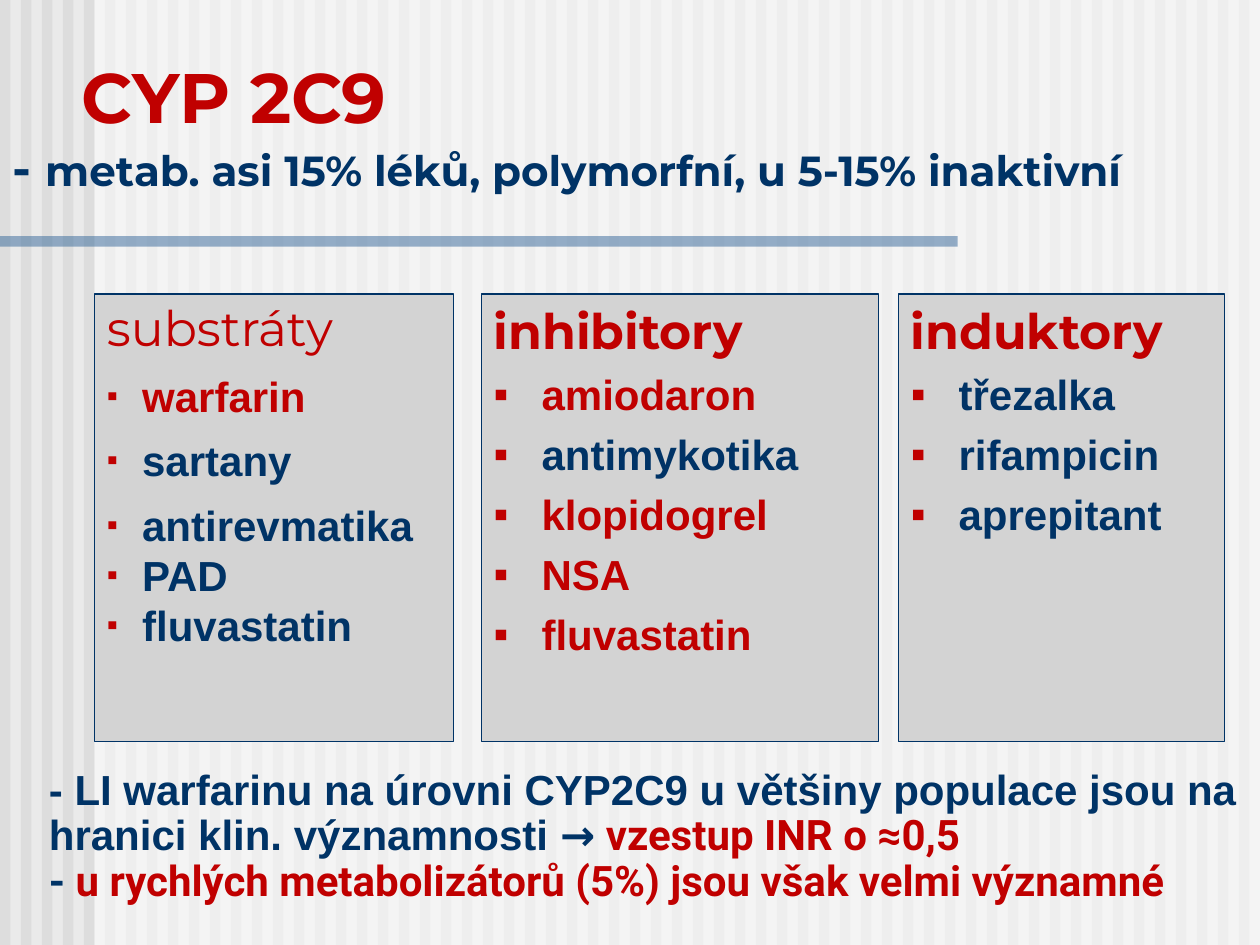
from dataclasses import dataclass
from typing import Optional

from lxml.etree import SubElement
from pptx import Presentation
from pptx.dml.color import RGBColor
from pptx.enum.shapes import MSO_SHAPE as Preset
from pptx.enum.text import MSO_ANCHOR as Anchor, PP_ALIGN as Align
from pptx.oxml.ns import qn
from pptx.util import Inches, Pt

COLUMNS, ROWS = 120, 90
CELL = Inches(10) // COLUMNS
RED, NAVY, BLUE = "C00000", "003366", "336699"
STRIPE, GRAY, WHITE, BACKGROUND = "DDDDDD", "D3D3D3", "FFFFFF", "EAEAEA"
HEADING_FONT, BODY_FONT, NOTE_FONT = "Montserrat", "Arial", "Roboto"


@dataclass(frozen=True)
class Box:
    column: float
    row: float
    width: float
    height: float

    def lengths(self) -> list[int]:
        return [round(value * CELL) for value in (self.column, self.row, self.width, self.height)]


@dataclass(frozen=True)
class Style:
    size: float
    color: str
    name: str = BODY_FONT
    bold: bool = True


@dataclass(frozen=True)
class Item:
    text: str
    color: str = NAVY
    line_points: Optional[float] = None


@dataclass(frozen=True)
class Card:
    column: float
    width: float
    heading: Item
    items: tuple[Item, ...]
    heading_bold: bool = True
    indent: float = 0.38
    bullet_percent: int = 100
    gap: float = 5.5


CARDS = (
    Card(9, 34.2, Item("substráty", RED, 32),
         (Item("warfarin", RED, 32), Item("sartany", NAVY, 32), Item("antirevmatika", NAVY, 32),
          Item("PAD", NAVY, 24), Item("fluvastatin", NAVY, 24)),
         heading_bold=False, indent=0.28, bullet_percent=75, gap=4.8),
    Card(45.84, 37.8, Item("inhibitory", RED),
         (Item("amiodaron", RED), Item("antimykotika"), Item("klopidogrel", RED),
          Item("NSA", RED), Item("fluvastatin", RED))),
    Card(85.56, 31.08, Item("induktory", RED),
         (Item("třezalka"), Item("rifampicin"), Item("aprepitant"))),
)


def rgb(color: str) -> RGBColor:
    return RGBColor.from_string(color)


def set_font(font, style: Style) -> None:
    font.size, font.bold, font.name = Pt(style.size), style.bold, style.name
    font.color.rgb = rgb(style.color)


def add_run(paragraph, text: str, style: Optional[Style] = None) -> None:
    run = paragraph.add_run()
    run.text = text
    if style:
        set_font(run.font, style)


def add_rectangle(slide, box: Box, fill: str, alpha: int = 100, line: Optional[str] = None):
    shape = slide.shapes.add_shape(Preset.RECTANGLE, *box.lengths())
    shape.shadow.inherit = False
    shape.fill.solid()
    shape.fill.fore_color.rgb = rgb(fill)
    if alpha < 100:
        color = shape._element.spPr.find(qn("a:solidFill"))[0]
        SubElement(color, qn("a:alpha"), val=str(alpha * 1000))
    if line:
        shape.line.color.rgb = rgb(line)
        shape.line.width = Pt(0.75)
    else:
        shape.line.fill.background()
    return shape


def add_text_box(slide, box: Box, anchor: Anchor):
    frame = slide.shapes.add_textbox(*box.lengths()).text_frame
    frame.word_wrap = True
    frame.vertical_anchor = anchor
    return frame


def add_bullet(paragraph, indent: float, percent: int) -> None:
    properties = paragraph._p.get_or_add_pPr()
    properties.set("marL", str(Inches(indent)))
    properties.set("indent", str(-Inches(indent)))
    color = SubElement(properties, qn("a:buClr"))
    SubElement(color, qn("a:srgbClr"), val=RED)
    SubElement(properties, qn("a:buSzPct"), val=str(percent * 1000))
    SubElement(properties, qn("a:buFont"), typeface=BODY_FONT)
    SubElement(properties, qn("a:buChar"), char="▪")


def draw_background(slide) -> None:
    slide.background.fill.solid()
    slide.background.fill.fore_color.rgb = rgb(BACKGROUND)
    for column in range(0, COLUMNS, 2):
        add_rectangle(slide, Box(column, 0, 1, ROWS), STRIPE)
    add_rectangle(slide, Box(9, 0, COLUMNS - 9, ROWS), WHITE, 50)
    add_rectangle(slide, Box(0, 22.5, 91.2, 1), BLUE, 50)


def draw_title(slide) -> None:
    frame = add_text_box(slide, Box(0, 4.32, COLUMNS, 15), Anchor.BOTTOM)
    title = frame.paragraphs[0]
    title._p.get_or_add_pPr().set("marL", str(Inches(0.55)))
    set_font(title.font, Style(40, RED, HEADING_FONT))
    add_run(title, "CYP 2C9")
    subtitle = frame.add_paragraph()
    add_run(subtitle, "- ", Style(28, NAVY, HEADING_FONT))
    add_run(subtitle, "metab. asi 15% léků, polymorfní, u 5-15% inaktivní",
            Style(24, NAVY, HEADING_FONT))


def draw_card(slide, card: Card) -> None:
    shape = add_rectangle(slide, Box(card.column, 28, card.width, 42.6), GRAY, line=NAVY)
    frame = shape.text_frame
    frame.word_wrap = True
    frame.vertical_anchor = Anchor.TOP
    for index, item in enumerate((card.heading, *card.items)):
        paragraph = frame.add_paragraph() if index else frame.paragraphs[0]
        paragraph.alignment = Align.LEFT
        paragraph.space_before = Pt(card.gap)
        if item.line_points:
            paragraph.line_spacing = Pt(item.line_points)
        if index:
            add_bullet(paragraph, card.indent, card.bullet_percent)
            style = Style(24, item.color)
        else:
            style = Style(28, item.color, HEADING_FONT, card.heading_bold)
        set_font(paragraph.font, style)
        add_run(paragraph, item.text)


def draw_conclusion(slide) -> None:
    frame = add_text_box(slide, Box(3.48, 72.36, 115.56, 14.76), Anchor.MIDDLE)
    first, second = frame.paragraphs[0], frame.add_paragraph()
    first.line_spacing = second.line_spacing = 0.9
    add_run(first, "- LI warfarinu na úrovni CYP2C9 u většiny populace jsou na "
                   "hranici klin. významnosti ", Style(24, NAVY))
    add_run(first, "→ ", Style(24, NAVY, NOTE_FONT))
    add_run(first, "vzestup INR o ≈0,5", Style(24, RED, NOTE_FONT))
    add_run(second, "- ", Style(24, NAVY, NOTE_FONT))
    add_run(second, "u rychlých metabolizátorů (5%) jsou však velmi významné",
            Style(24, RED, NOTE_FONT))


def main() -> None:
    presentation = Presentation()
    presentation.slide_width, presentation.slide_height = COLUMNS * CELL, ROWS * CELL
    slide = presentation.slides.add_slide(presentation.slide_layouts[6])
    draw_background(slide)
    draw_title(slide)
    for card in CARDS:
        draw_card(slide, card)
    draw_conclusion(slide)
    presentation.save("out.pptx")


if __name__ == "__main__":
    main()
